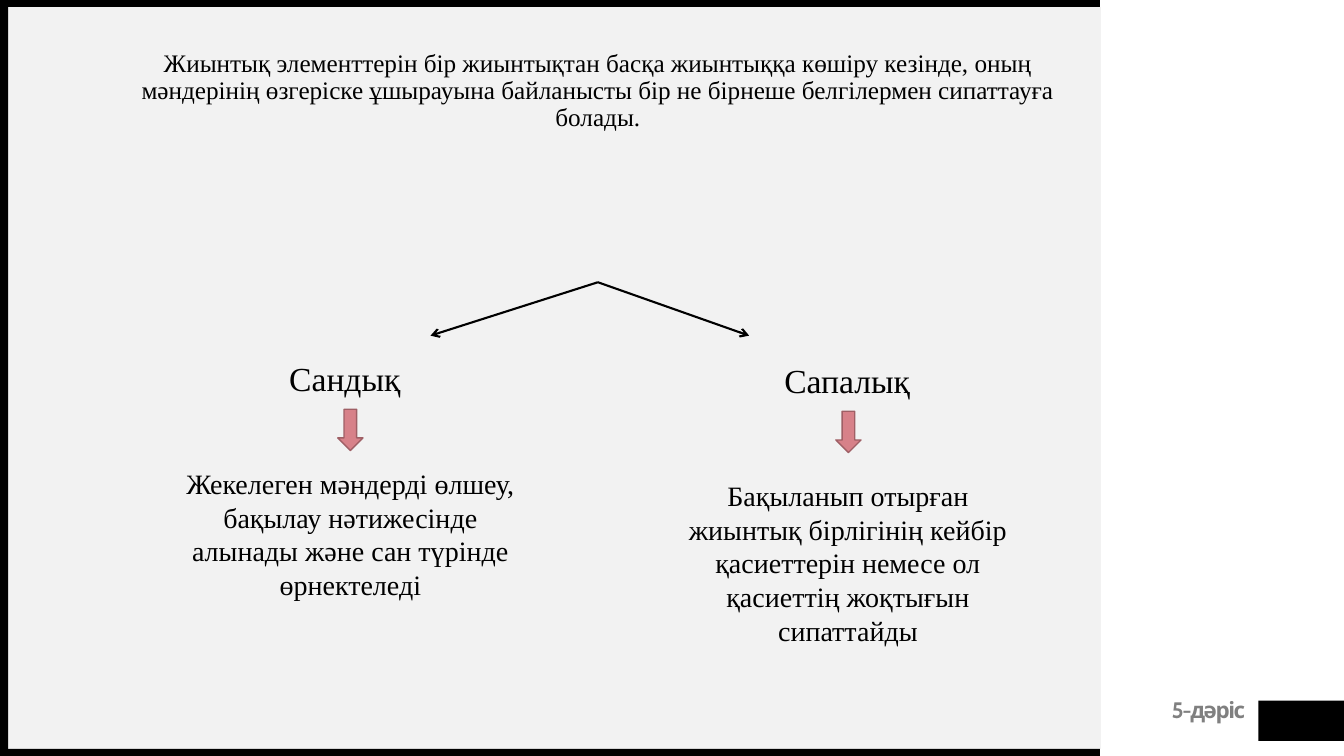
from lxml.etree import SubElement
from pptx import Presentation
from pptx.dml.color import RGBColor
from pptx.enum.shapes import MSO_CONNECTOR as Connector, MSO_SHAPE as Shape
from pptx.enum.text import MSO_ANCHOR as Anchor, MSO_AUTO_SIZE as AutoSize, PP_ALIGN as Align
from pptx.oxml.ns import qn
from pptx.util import Inches, Pt

BLACK = RGBColor(0x00, 0x00, 0x00)
PANEL = RGBColor(0xF2, 0xF2, 0xF2)
GREY = RGBColor(0x80, 0x80, 0x80)
ROSE = RGBColor(0xD7, 0x81, 0x89)
ROSE_EDGE = RGBColor(0x9F, 0x5F, 0x65)


def write(frame, text, size=20, font="Times New Roman", color=BLACK, bold=False,
          align=Align.CENTER, wrap=True, grow=True, insets=(0.1, 0.05, 0.1, 0.05),
          line_spacing=None, space_before=None, tracking=None):
    frame.word_wrap = wrap
    frame.auto_size = AutoSize.SHAPE_TO_FIT_TEXT if grow else AutoSize.NONE
    frame.vertical_anchor = Anchor.TOP
    (frame.margin_left, frame.margin_top,
     frame.margin_right, frame.margin_bottom) = map(Inches, insets)
    paragraph = frame.paragraphs[0]
    paragraph.alignment = align
    paragraph.line_spacing = line_spacing
    paragraph.space_before = space_before
    run = paragraph.add_run()
    run.text = text
    run.font.name = font
    run.font.size = Pt(size)
    run.font.bold = bold
    run.font.color.rgb = color
    if tracking is not None:
        run.font._element.set("spc", str(tracking))


class LectureSlide:
    def __init__(self, deck):
        self.slide = deck.slides.add_slide(deck.slide_layouts[5])
        self.shapes = self.slide.shapes

    def block(self, box, fill, kind=Shape.RECTANGLE, edge=None):
        block = self.shapes.add_shape(kind, *map(Inches, box))
        block.shadow.inherit = False
        block.fill.solid()
        block.fill.fore_color.rgb = fill
        if edge is None:
            block.line.fill.background()
        else:
            block.line.color.rgb = edge
            block.line.width = Pt(1)

    def text(self, box, text, **style):
        write(self.shapes.add_textbox(*map(Inches, box)).text_frame, text, **style)

    def title(self, box, text, **style):
        title = self.shapes.title
        title.left, title.top, title.width, title.height = map(Inches, box)
        title.element.getparent().append(title.element)
        write(title.text_frame, text, **style)
        return title

    def branch(self, source, end):
        branch = self.shapes.add_connector(Connector.STRAIGHT, 0, 0, *map(Inches, end))
        branch.begin_connect(source, 2)
        branch.line.color.rgb = BLACK
        branch.line.width = Pt(1.5)
        SubElement(branch.line._get_or_add_ln(), qn("a:tailEnd"), type="arrow")
        SubElement(branch._element.spPr, qn("a:effectLst"))


def main():
    deck = Presentation()
    deck.slide_width, deck.slide_height = Inches(13.33), Inches(7.5)
    lecture = LectureSlide(deck)

    lecture.block((0.08, 0.07, 10.84, 7.36), PANEL)
    for frame_bar in ((0, 0, 10.91, 0.07), (0, 7.43, 10.91, 0.07),
                      (0, 0, 0.08, 7.5), (12.48, 6.95, 0.85, 0.4)):
        lecture.block(frame_bar, BLACK)
    lecture.text((10.53, 6.94, 1.82, 0.24), "5-дәріс", size=16, font="Cabin",
                 color=GREY, bold=True, align=Align.RIGHT, insets=(0, 0.04, 0, 0),
                 line_spacing=Pt(14), tracking=-100)

    statement = lecture.title(
        (1.18, 0.5, 9.5, 2.3),
        "Жиынтық элементтерін бір жиынтықтан басқа жиынтыққа көшіру кезінде, оның "
        "мәндерінің өзгеріске ұшырауына байланысты бір не бірнеше белгілермен "
        "сипаттауға болады.",
        size=18, grow=False, insets=(0, 0, 0, 0), line_spacing=0.9, space_before=Pt(10))

    kinds = (
        ("Сандық", (2.77, 3.5, 1.32, 0.5), 4.27, 3.35, (1.73, 4.58, 3.49, 1.45),
         "Жекелеген мәндерді өлшеу, бақылау нәтижесінде алынады және сан түрінде "
         "өрнектеледі"),
        ("Сапалық", (7.68, 3.52, 1.45, 0.5), 7.43, 8.29, (6.55, 4.7, 3.72, 1.78),
         "Бақыланып отырған жиынтық бірлігінің кейбір қасиеттерін немесе ол "
         "қасиеттің жоқтығын сипаттайды"),
    )
    for name, name_box, branch_x, arrow_x, meaning_box, meaning in kinds:
        lecture.branch(statement, (branch_x, 3.33))
        lecture.text(name_box, name, size=24, align=Align.LEFT, wrap=False)
        lecture.block((arrow_x, name_box[1] + 0.56, 0.25, 0.41), ROSE,
                      kind=Shape.DOWN_ARROW, edge=ROSE_EDGE)
        lecture.text(meaning_box, meaning)

    deck.save("out.pptx")


if __name__ == "__main__":
    main()
